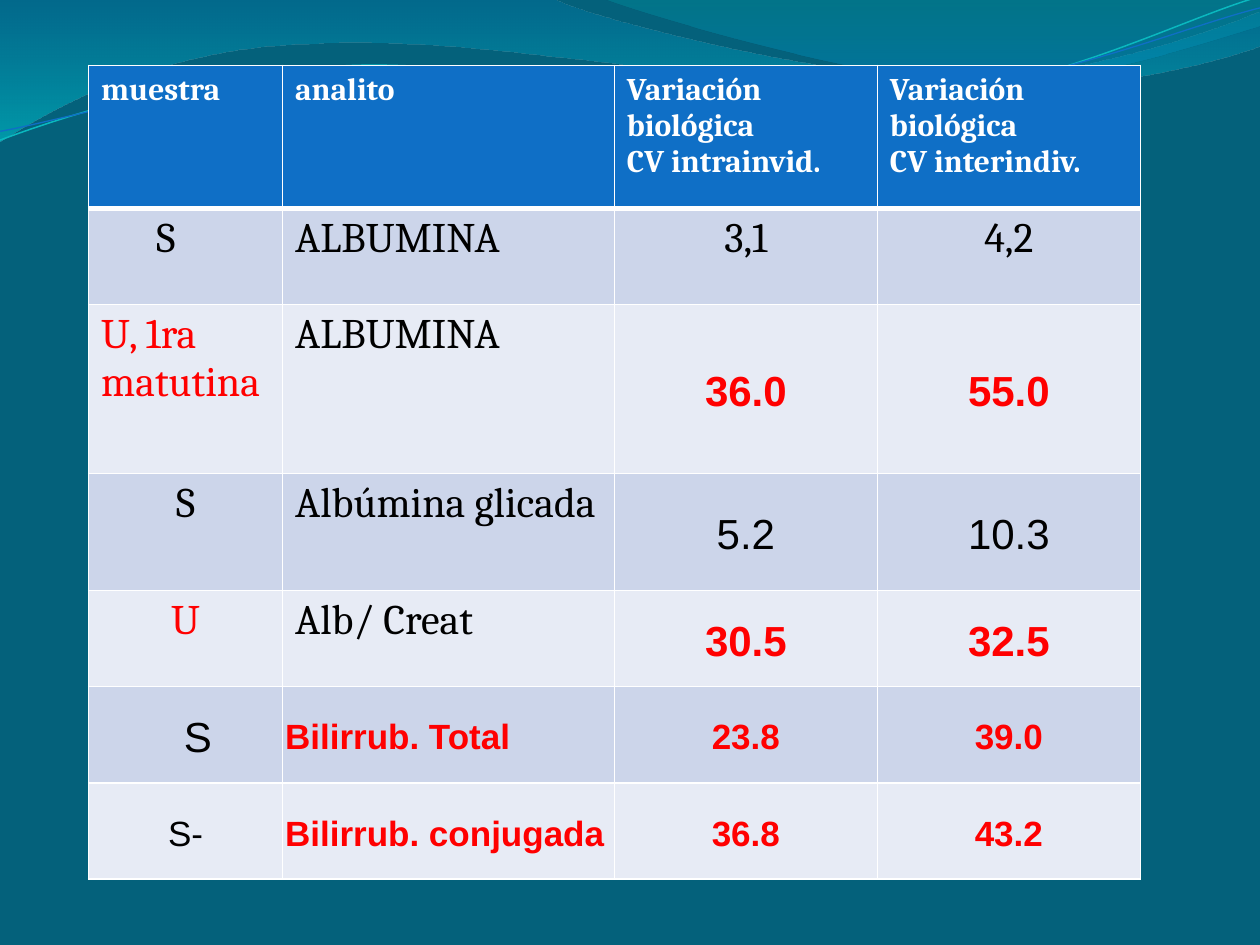
from dataclasses import dataclass, replace
from itertools import chain
from lxml.etree import SubElement
from pptx import Presentation
from pptx.dml.color import RGBColor as RGB
from pptx.enum.text import MSO_ANCHOR as Anchor, PP_ALIGN as Align
from pptx.oxml.ns import qn
from pptx.util import Pt


@dataclass(frozen=True)
class Theme:
    background: str = "04617B"
    header: str = "0F6FC6"
    bands: tuple = ("CCD5EA", "E7EBF5")
    white: str = "FFFFFF"
    black: str = "000000"
    red: str = "FF0000"
    back_wave: tuple = ((0, "0074A1", 45), (1, "00C6CF", 55))
    front_wave: tuple = ((0, "00A1A9", 30), (0.8, "008BBF", 45))
    teal_line: str = "0AB8BF"
    blue_line: str = "0F6FC6"
    serif: str = "Cambria"
    sans: str = "Arial"
    header_size: int = 18
    medium_size: int = 20
    large_size: int = 24
    grid_width: int = 1
    header_rule: int = 3


@dataclass(frozen=True)
class Look:
    font: str
    size: int
    color: str
    bold: bool = False
    align: Align = Align.LEFT
    tight: bool = False
    indent: float = 0


class SlideBuilder:
    def __init__(self, slide, theme):
        self.slide = slide
        self.theme = theme

    def background(self):
        fill = self.slide.background.fill
        fill.solid()
        fill.fore_color.rgb = RGB.from_string(self.theme.background)

    def outline(self, segments, close):
        points = [(Pt(x), Pt(y)) for x, y in chain.from_iterable(segments)]
        builder = self.slide.shapes.build_freeform(*points[0])
        builder.add_line_segments(points[1:], close=close)
        shape = builder.convert_to_shape()
        shape.shadow.inherit = False
        steps = iter(list(shape._element.iter(qn("a:lnTo"))))
        for segment in segments[1:]:
            first, *others = [next(steps) for _ in segment]
            if others:
                bezier = first.makeelement(qn("a:cubicBezTo"))
                first.addprevious(bezier)
                for step in (first, *others):
                    bezier.append(step[0])
                    step.getparent().remove(step)
        return shape

    def wave(self, segments, stops):
        shape = self.outline(segments, True)
        shape.line.fill.background()
        shape.fill.gradient()
        shape.fill.gradient_angle = 270
        for stop, (position, color, _) in zip(shape.fill.gradient_stops, stops):
            stop.position = position
            stop.color.rgb = RGB.from_string(color)
        colors = shape._element.spPr.iter(qn("a:srgbClr"))
        for color, (_, _, opacity) in zip(list(colors), stops):
            SubElement(color, qn("a:alpha"), val=str(opacity * 1000))

    def curve(self, segments, color, width):
        shape = self.outline(segments, False)
        shape.rotation = 357.3
        shape.fill.background()
        shape.line.color.rgb = RGB.from_string(color)
        shape.line.width = Pt(width)

    def borders(self, cell, top, bottom):
        properties = cell._tc.get_or_add_tcPr()
        grid = self.theme.grid_width
        for side, width in (("L", grid), ("R", grid), ("T", top), ("B", bottom)):
            line = SubElement(properties, qn(f"a:ln{side}"), w=str(Pt(width)))
            fill = SubElement(line, qn("a:solidFill"))
            SubElement(fill, qn("a:srgbClr"), val=self.theme.white)

    def cell(self, cell, text, look, color):
        cell.fill.solid()
        cell.fill.fore_color.rgb = RGB.from_string(color)
        cell.text = text
        if look.tight:
            cell.vertical_anchor = Anchor.MIDDLE
            cell.margin_left = cell.margin_right = Pt(1.44)
            cell.margin_top = cell.margin_bottom = Pt(1.44)
        for paragraph in cell.text_frame.paragraphs:
            paragraph.alignment = look.align
            if look.tight:
                paragraph.line_spacing = 1.15
            if look.indent:
                paragraph._p.get_or_add_pPr().set("marL", str(Pt(look.indent)))
            font = paragraph.font
            font.name, font.size, font.bold = look.font, Pt(look.size), look.bold
            font.color.rgb = RGB.from_string(look.color)

    def table(self, left, top, widths, heights, rows):
        theme = self.theme
        table = self.slide.shapes.add_table(
            len(heights), len(widths), Pt(left), Pt(top),
            Pt(sum(widths)), Pt(sum(heights))).table
        for column, width in zip(table.columns, widths):
            column.width = Pt(width)
        for index, (height, row) in enumerate(zip(heights, rows)):
            table.rows[index].height = Pt(height)
            color = theme.bands[(index - 1) % 2] if index else theme.header
            above = theme.header_rule if index == 1 else theme.grid_width
            below = theme.header_rule if index == 0 else theme.grid_width
            for column, (text, look) in enumerate(row):
                cell = table.cell(index, column)
                self.borders(cell, above, below)
                self.cell(cell, text, look, color)


def main():
    theme = Theme()
    deck = Presentation()
    deck.slide_width, deck.slide_height = Pt(720), Pt(540)
    page = SlideBuilder(deck.slides.add_slide(deck.slide_layouts[6]), theme)
    page.background()

    page.wave([
        [(0, 0)], [(317, -0.5)],
        [(343, 12), (478, 45), (546, 45)], [(614, 45), (690, 19), (720, 6.5)],
        [(720.5, 26)],
        [(708, 32), (626, 55), (537, 54)], [(447, 54), (275, 20), (185, 24.5)],
        [(93, 26), (33, 60), (-0.5, 81)], [(0, 0)],
    ], theme.back_wave)
    page.wave([
        [(345, -0.5)],
        [(366, 8), (491, 45), (554, 47)], [(616, 50), (692, 23), (720, 15)],
        [(720, 0)], [(345, -0.5)],
    ], theme.front_wave)
    page.curve([
        [(-1.4, 63.1)],
        [(34.2, 51.7), (114.3, 29.4), (199.4, 30)],
        [(284.4, 30.5), (425.9, 67.2), (512.1, 64.7)],
        [(599.3, 62.3), (676.1, 25.9), (720.1, 15.4)],
    ], theme.teal_line, 0.85)
    page.curve([
        [(-1.1, 58.1)],
        [(33.1, 53.7), (118.2, 32.6), (204.3, 32.7)],
        [(290.3, 33.7), (429.1, 63.8), (515.3, 61.4)],
        [(601.5, 59.4), (678, 30), (721.4, 21.5)],
    ], theme.blue_line, 0.75)

    heading = Look(theme.serif, theme.header_size, theme.white, bold=True)
    name = Look(theme.serif, theme.large_size, theme.black)
    centered = replace(name, align=Align.CENTER)
    value = replace(centered, font=theme.sans, tight=True)
    alert = replace(value, color=theme.red, bold=True)
    small_alert = replace(alert, size=theme.medium_size)
    alert_name = replace(small_alert, align=Align.LEFT)

    rows = [
        [(text, heading) for text in (
            "muestra", "analito",
            "Variación biológica\nCV intrainvid.",
            "Variación biológica\nCV interindiv.")],
        [("S", replace(name, indent=31.5)), ("ALBUMINA", name),
         ("3,1", centered), ("4,2", centered)],
        [("U, 1ra matutina", replace(name, color=theme.red)), ("ALBUMINA", name),
         ("36.0", alert), ("55.0", alert)],
        [("S", centered), ("Albúmina glicada", name),
         ("5.2", value), ("10.3", value)],
        [("U", replace(centered, color=theme.red)), ("Alb/ Creat", name),
         ("30.5", alert), ("32.5", alert)],
        [("S", replace(value, indent=14)), ("Bilirrub. Total", alert_name),
         ("23.8", small_alert), ("39.0", small_alert)],
        [("S-", replace(value, size=theme.medium_size)),
         ("Bilirrub. conjugada", alert_name),
         ("36.8", small_alert), ("43.2", small_alert)],
    ]
    page.table(50.6, 37.4, (110.9, 189.6, 150.3, 150.3),
               (81.6, 55, 96.5, 67, 55, 55, 54.8), rows)
    deck.save("out.pptx")


if __name__ == "__main__":
    main()
